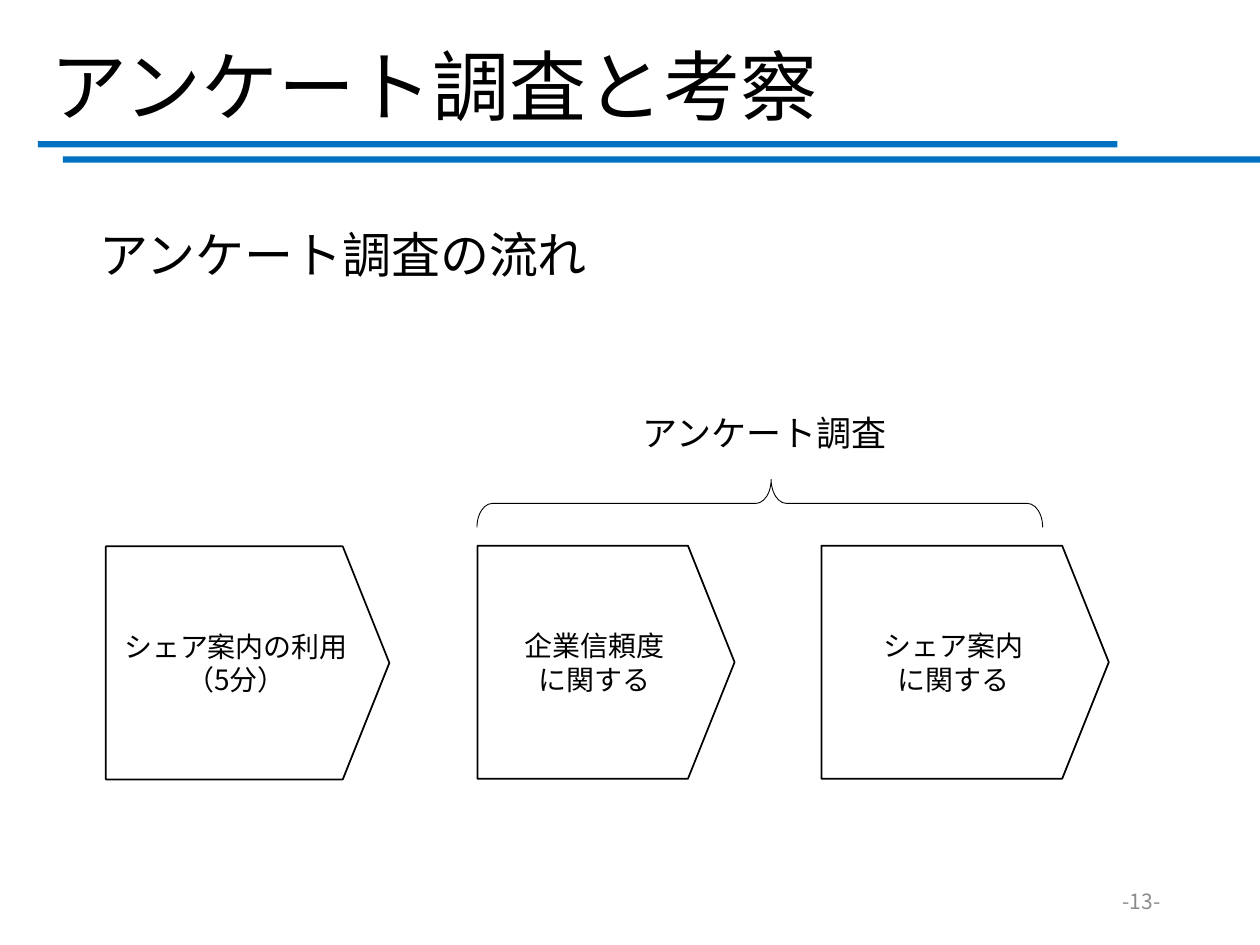
from dataclasses import dataclass

from lxml import etree
from pptx import Presentation
from pptx.dml.color import RGBColor
from pptx.enum.shapes import MSO_SHAPE
from pptx.enum.text import MSO_ANCHOR, MSO_AUTO_SIZE, PP_ALIGN
from pptx.oxml.ns import qn
from pptx.util import Pt

PLATE, BRACE, RECT = MSO_SHAPE.PENTAGON, MSO_SHAPE.RIGHT_BRACE, MSO_SHAPE.RECTANGLE
LEFT, CENTER, RIGHT = PP_ALIGN.LEFT, PP_ALIGN.CENTER, PP_ALIGN.RIGHT
TOP, MIDDLE = MSO_ANCHOR.TOP, MSO_ANCHOR.MIDDLE
FIXED = MSO_AUTO_SIZE.NONE


@dataclass(frozen=True)
class Theme:
    font: str = "Noto Sans CJK JP"
    ink: RGBColor = RGBColor(0, 0, 0)
    gray: RGBColor = RGBColor(0x8C, 0x8C, 0x8C)
    blue: RGBColor = RGBColor(0x00, 0x70, 0xC0)
    title: int = 44
    body: int = 28
    label: int = 20
    step: int = 16
    page: int = 12


@dataclass(frozen=True)
class Box:
    x: float
    y: float
    w: float
    h: float

    def place(self) -> tuple:
        return Pt(self.x), Pt(self.y), Pt(self.w), Pt(self.h)


@dataclass(frozen=True)
class Step:
    box: Box
    lines: tuple


THEME = Theme()
BARS = (Box(21.6, 80.6, 617, 3.6), Box(36, 89.3, 684, 3.6))
STEPS = (
    Step(Box(60.5, 312.2, 162, 133.2), ("シェア案内の利用", "（5分）")),
    Step(Box(272.9, 311.8, 146.9, 133.2), ("企業信頼度", "に関する")),
    Step(Box(469.4, 311.8, 164.2, 133.2), ("シェア案内", "に関する")),
)


def write(shape, lines: tuple, size: int, align=LEFT, anchor=MIDDLE,
          color=THEME.ink, space: float = 1.0) -> None:
    frame = shape.text_frame
    frame.word_wrap = True
    frame.auto_size = FIXED
    frame.vertical_anchor = anchor
    for i, line in enumerate(lines):
        para = frame.paragraphs[0] if i == 0 else frame.add_paragraph()
        para.alignment = align
        para.line_spacing = space
        para.space_before = Pt(0)
        run = para.add_run()
        run.text = line
        run.font.size = Pt(size)
        run.font.color.rgb = color
        run.font.name = THEME.font
        # East Asian glyphs need their own font entry
        east = etree.SubElement(run.font._element, qn("a:ea"))
        east.set("typeface", THEME.font)


def move(shape, box: Box) -> None:
    shape.left, shape.top, shape.width, shape.height = box.place()


def draw(slide, kind, box: Box, width: float):
    """Add an unfilled shape with a black outline."""
    shape = slide.shapes.add_shape(kind, *box.place())
    shape.shadow.inherit = False
    shape.fill.background()
    shape.line.color.rgb = THEME.ink
    shape.line.width = Pt(width)
    return shape


def add_bar(slide, box: Box) -> None:
    bar = slide.shapes.add_shape(RECT, *box.place())
    bar.shadow.inherit = False
    bar.fill.solid()
    bar.fill.fore_color.rgb = THEME.blue
    bar.line.fill.background()


def add_step(slide, step: Step) -> None:
    plate = draw(slide, PLATE, step.box, 1)
    plate.adjustments[0] = 0.2
    write(plate, step.lines, THEME.step, CENTER)


def add_text(slide, box: Box, text: str, size: int, **style) -> None:
    write(slide.shapes.add_textbox(*box.place()), (text,), size, **style)


def main() -> None:
    deck = Presentation()
    deck.slide_width, deck.slide_height = Pt(720), Pt(540)
    slide = deck.slides.add_slide(deck.slide_layouts[1])

    # Title and its double rule
    for bar in BARS:
        add_bar(slide, bar)
    title = slide.shapes.title
    move(title, Box(21.6, -0.7, 620.6, 104.4))
    write(title, ("アンケート調査と考察",), THEME.title, space=0.9)

    # Subheading, without a bullet
    body = slide.placeholders[1]
    move(body, Box(49.7, 128.2, 620.6, 51.8))
    props = body.text_frame.paragraphs[0]._p.get_or_add_pPr()
    props.set("marL", "0")
    props.set("indent", "0")
    etree.SubElement(props, qn("a:buNone"))
    write(body, ("アンケート調査の流れ",), THEME.body, anchor=TOP, space=0.9)

    # Flow of steps
    for step in STEPS:
        add_step(slide, step)

    # Brace over the survey steps, turned to point up
    brace = draw(slide, BRACE, Box(420.5, 126, 27.4, 323.3), 0.5)
    brace.rotation = 270
    brace.adjustments[0] = 0.32
    brace.adjustments[1] = 0.52
    add_text(slide, Box(360, 231.8, 156.2, 31.7), "アンケート調査", THEME.label, anchor=TOP)

    # Page number
    add_text(slide, Box(508.3, 500.4, 162, 28.8), "-13-", THEME.page,
             align=RIGHT, color=THEME.gray)

    deck.save("out.pptx")


if __name__ == "__main__":
    main()
